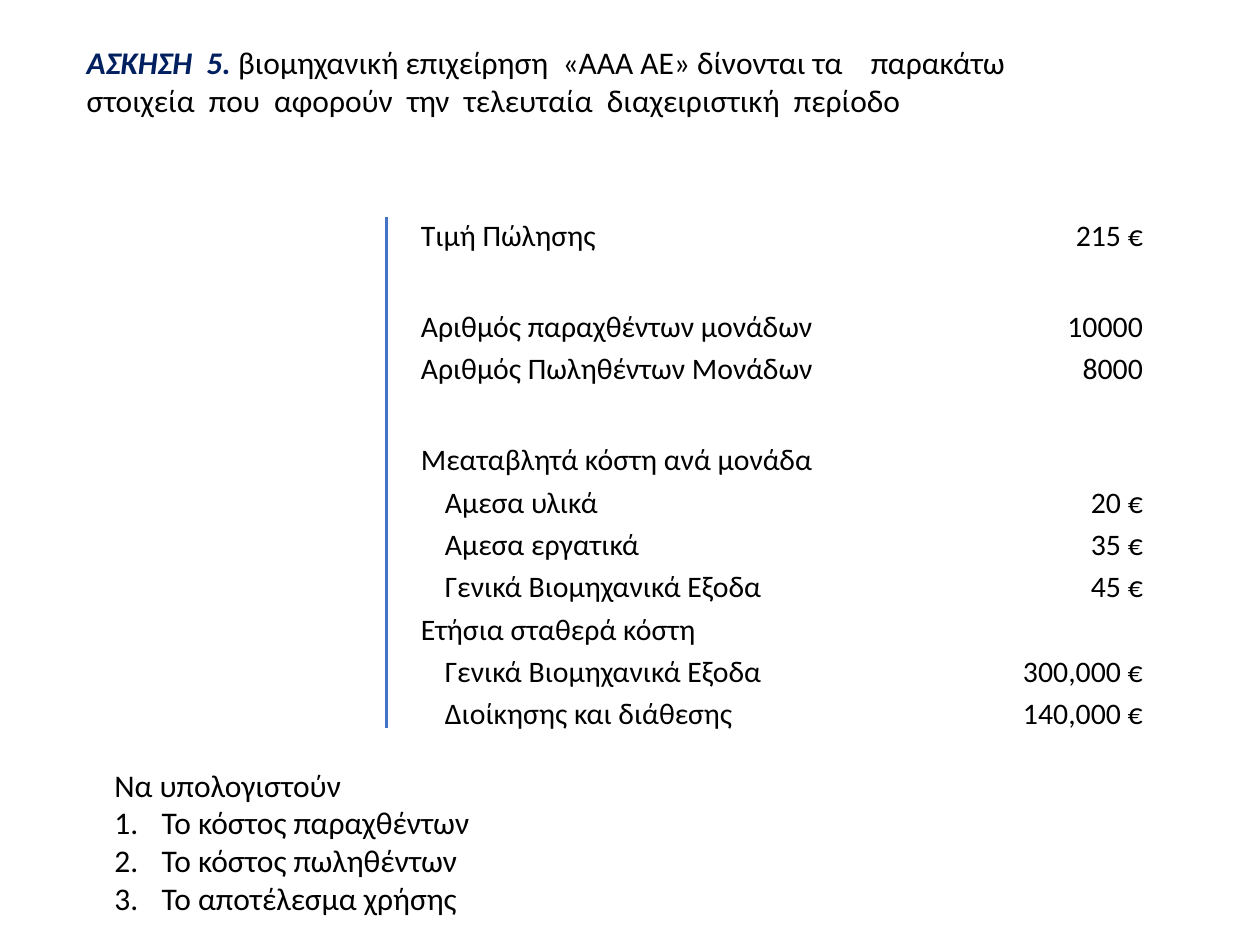
from lxml import etree
from pptx import Presentation
from pptx.dml.color import RGBColor
from pptx.enum.shapes import MSO_CONNECTOR as Connector
from pptx.enum.text import MSO_ANCHOR as Anchor, MSO_AUTO_SIZE as AutoSize, PP_ALIGN as Align
from pptx.oxml.ns import qn
from pptx.util import Pt

BLACK, NAVY, BLUE = "000000", "002060", "4472C4"
ROW_HEIGHT, GAP_HEIGHT = 24.2, 28
INDENT = 27

COST_DATA = [
    ("Τιμή Πώλησης", "215 €", 0),
    ("", "", 0),
    ("Αριθμός παραχθέντων μονάδων", "10000", 0),
    ("Αριθμός Πωληθέντων Μονάδων", "8000", 0),
    ("", "", 0),
    ("Μεαταβλητά κόστη ανά μονάδα", "", 0),
    ("Αμεσα υλικά", "20 €", 1),
    ("Αμεσα εργατικά", "35 €", 1),
    ("Γενικά Βιομηχανικά Εξοδα", "45 €", 1),
    ("Ετήσια σταθερά κόστη", "", 0),
    ("Γενικά Βιομηχανικά Εξοδα", "300,000 €", 1),
    ("Διοίκησης και διάθεσης", "140,000 €", 1),
]
QUESTIONS = ["Το κόστος παραχθέντων", "Το κόστος πωληθέντων", "Το αποτέλεσμα χρήσης"]


def color(hex_code):
    return RGBColor.from_string(hex_code)


def style(font, size, hex_code=BLACK):
    font.name = "Calibri"
    font.size = Pt(size)
    font.color.rgb = color(hex_code)


def add_text(slide, left, top, width, height, lines):
    frame = slide.shapes.add_textbox(Pt(left), Pt(top), Pt(width), Pt(height)).text_frame
    frame.word_wrap = True
    frame.auto_size = AutoSize.SHAPE_TO_FIT_TEXT
    frame.text = "\n".join(lines)
    for paragraph in frame.paragraphs:
        style(paragraph.font, 18)
    return frame.paragraphs


def number(paragraph):
    properties = paragraph._p.get_or_add_pPr()
    properties.set("marL", str(Pt(INDENT)))
    properties.set("indent", str(-Pt(INDENT)))
    bullet = etree.Element(qn("a:buAutoNum"), type="arabicPeriod")
    properties.insert_element_before(bullet, "a:tabLst", "a:defRPr", "a:extLst")


def add_rule(slide, x, top, bottom):
    rule = slide.shapes.add_connector(Connector.STRAIGHT, Pt(x), Pt(top), Pt(x), Pt(bottom))
    rule.line.color.rgb = color(BLUE)
    rule.line.width = Pt(1.5)
    etree.SubElement(rule._element.spPr, qn("a:effectLst"))


def fill_cell(cell, text, left_margin, align):
    cell.text = text
    cell.vertical_anchor = Anchor.BOTTOM
    cell.margin_left = Pt(left_margin)
    cell.margin_top = cell.margin_right = Pt(0.7)
    cell.margin_bottom = 0
    cell.fill.background()
    paragraph = cell.text_frame.paragraphs[0]
    paragraph.alignment = align
    style(paragraph.font, 17)


def add_cost_table(slide, left, top, widths):
    heights = [ROW_HEIGHT if label else GAP_HEIGHT for label, _, _ in COST_DATA]
    table = slide.shapes.add_table(len(COST_DATA), len(widths), Pt(left), Pt(top),
                                   Pt(sum(widths)), Pt(sum(heights))).table
    table.first_row = table.horz_banding = False
    for column, width in zip(table.columns, widths):
        column.width = Pt(width)
    for row, height, (label, amount, level) in zip(table.rows, heights, COST_DATA):
        row.height = Pt(height)
        fill_cell(row.cells[0], label, 14.4 if level else 0.7, Align.LEFT)
        fill_cell(row.cells[1], amount, 0.7, Align.RIGHT)


def add_exercise(slide):
    intro = add_text(slide, 42.5, 21, 601, 51, [
        "", "στοιχεία  που  αφορούν  την  τελευταία  διαχειριστική  περίοδο"])[0]
    heading = intro.add_run()
    heading.text = "ΑΣΚΗΣΗ  5."
    heading.font.bold = heading.font.italic = True
    heading.font.color.rgb = color(NAVY)
    intro.add_run().text = " βιομηχανική επιχείρηση  «ΑΑΑ AE» δίνονται τα    παρακάτω"


def add_questions(slide):
    lines = add_text(slide, 58.3, 434, 569.5, 94.5, ["Να υπολογιστούν", *QUESTIONS])
    for question in lines[1:]:
        number(question)


def main():
    deck = Presentation()
    deck.slide_width, deck.slide_height = Pt(720), Pt(540)
    slide = deck.slides.add_slide(deck.slide_layouts[6])
    add_rule(slide, 221, 124, 416)
    add_cost_table(slide, 239.8, 121, [283.7, 130.3])
    add_exercise(slide)
    add_questions(slide)
    deck.save("out.pptx")


if __name__ == "__main__":
    main()
